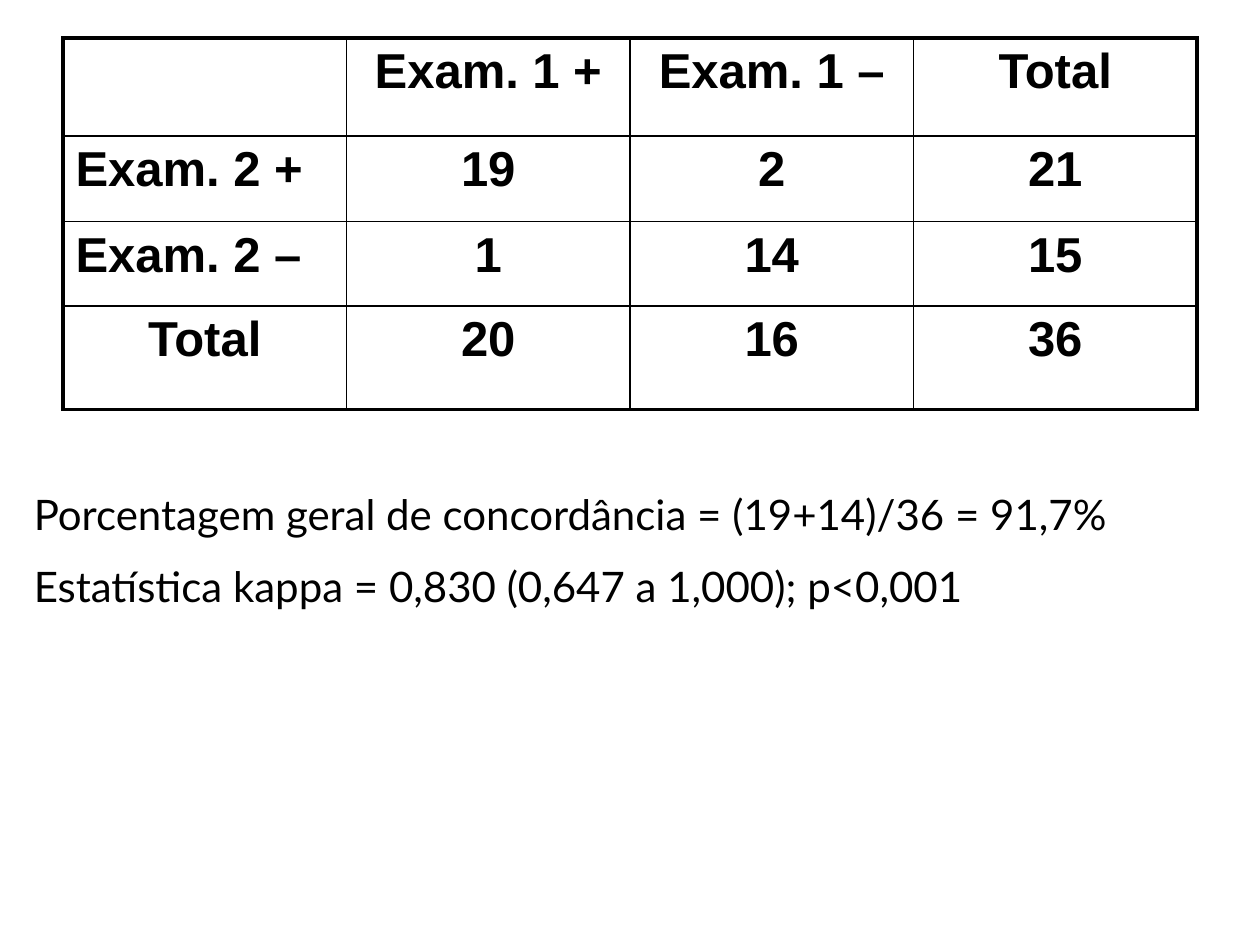
from dataclasses import dataclass

from lxml import etree
from pptx import Presentation
from pptx.dml.color import RGBColor
from pptx.enum.text import MSO_AUTO_SIZE, PP_ALIGN
from pptx.oxml.ns import qn
from pptx.util import Inches, Pt

LEFT, CENTER = PP_ALIGN.LEFT, PP_ALIGN.CENTER
BLANK_LAYOUT = 6


@dataclass(frozen=True)
class Theme:
    ink: str = "000000"
    table_font: str = "Arial"
    table_size: int = 28
    body_font: str = "Lato"
    body_size: int = 24
    outer_line: float = 2.25
    inner_line: float = 1


THEME = Theme()

AGREEMENT = [
    ["", "Exam. 1 +", "Exam. 1 –", "Total"],
    ["Exam. 2 +", "19", "2", "21"],
    ["Exam. 2 –", "1", "14", "15"],
    ["Total", "20", "16", "36"],
]
ROW_HEIGHTS = [0.78, 0.68, 0.67, 0.82]
RESULTS = [
    "Porcentagem geral de concordância = (19+14)/36 = 91,7%",
    "Estatística kappa = 0,830 (0,647 a 1,000); p<0,001",
]


def format_font(font, name, size, bold=False):
    font.name = name
    font.size = Pt(size)
    font.bold = bold
    font.color.rgb = RGBColor.from_string(THEME.ink)


def set_borders(cell, outer_sides):
    """Draw all four cell borders, heavier on the table's outer sides."""
    properties = cell._tc.get_or_add_tcPr()
    for position, side in enumerate("LRTB"):
        width = THEME.outer_line if side in outer_sides else THEME.inner_line
        line = etree.Element(qn(f"a:ln{side}"), w=str(Pt(width)))
        fill = etree.SubElement(line, qn("a:solidFill"))
        etree.SubElement(fill, qn("a:srgbClr"), val=THEME.ink)
        properties.insert(position, line)


def add_agreement_table(slide, left, top, width):
    row_count, column_count = len(AGREEMENT), len(AGREEMENT[0])
    table = slide.shapes.add_table(
        row_count, column_count, Inches(left), Inches(top),
        Inches(width), Inches(sum(ROW_HEIGHTS))).table
    table.first_row = table.horz_banding = False
    for column in table.columns:
        column.width = Inches(width / column_count)
    for row, height in zip(table.rows, ROW_HEIGHTS):
        row.height = Inches(height)

    for row_index, values in enumerate(AGREEMENT):
        for column_index, value in enumerate(values):
            cell = table.cell(row_index, column_index)
            cell.fill.background()
            cell.text_frame.text = value
            paragraph = cell.text_frame.paragraphs[0]
            paragraph.alignment = LEFT if value.startswith("Exam. 2") else CENTER
            format_font(paragraph.font, THEME.table_font, THEME.table_size, bold=True)
            for run in paragraph.runs:
                format_font(run.font, THEME.table_font, THEME.table_size, bold=True)
            edges = {
                "L": column_index == 0,
                "R": column_index == column_count - 1,
                "T": row_index == 0,
                "B": row_index == row_count - 1,
            }
            set_borders(cell, [side for side, is_outer in edges.items() if is_outer])


def add_results(slide, left, top, width, height):
    box = slide.shapes.add_textbox(
        Inches(left), Inches(top), Inches(width), Inches(height))
    text_frame = box.text_frame
    text_frame.word_wrap = True
    text_frame.auto_size = MSO_AUTO_SIZE.SHAPE_TO_FIT_TEXT
    text_frame.text = "\n".join(RESULTS)
    for index, paragraph in enumerate(text_frame.paragraphs):
        paragraph.space_before = Pt(THEME.body_size / 2 if index else 0)
        format_font(paragraph.runs[0].font, THEME.body_font, THEME.body_size)


def main():
    presentation = Presentation()
    presentation.slide_width = Inches(10)
    presentation.slide_height = Inches(7.5)
    slide = presentation.slides.add_slide(presentation.slide_layouts[BLANK_LAYOUT])
    add_agreement_table(slide, left=0.5, top=0.3, width=9)
    add_results(slide, left=0.17, top=3.83, width=9.67, height=1.11)
    presentation.save("out.pptx")


if __name__ == "__main__":
    main()
